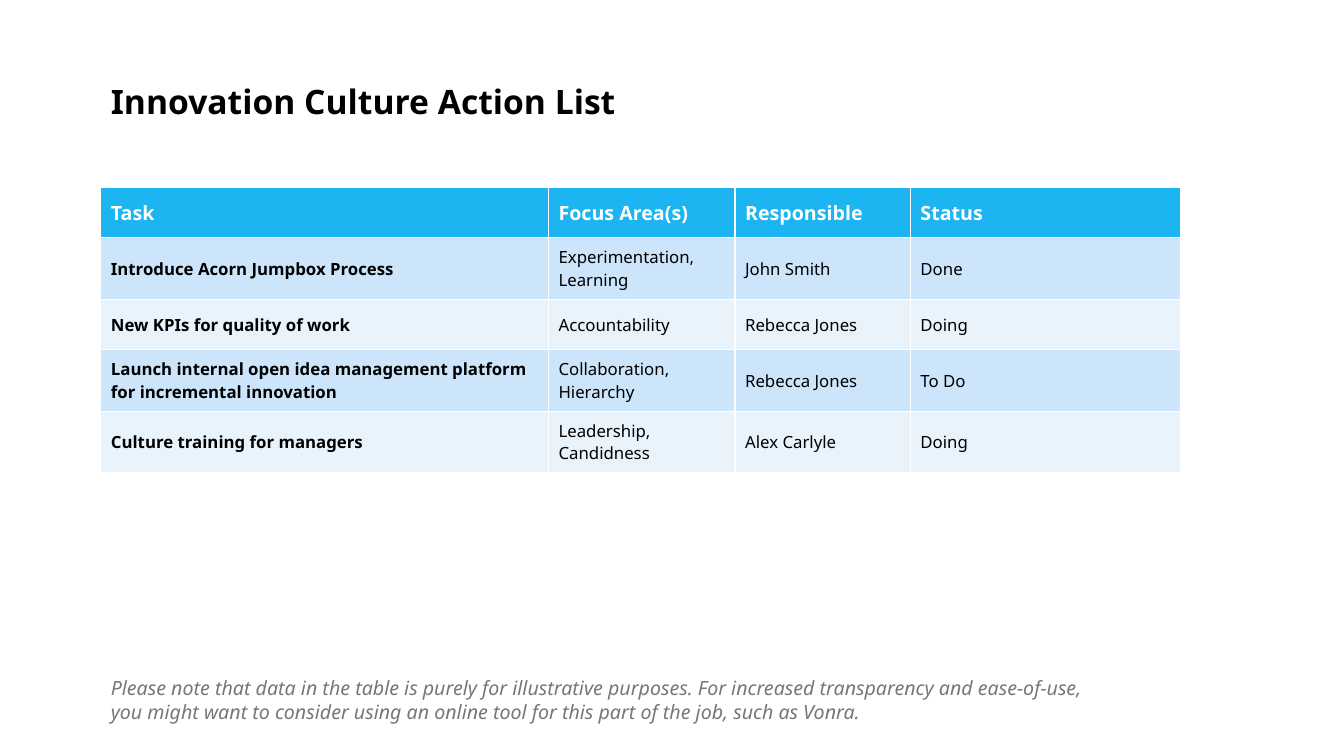
from pptx import Presentation
from pptx.dml.color import RGBColor
from pptx.enum.text import MSO_ANCHOR, MSO_AUTO_SIZE
from pptx.oxml import parse_xml
from pptx.oxml.ns import nsdecls
from pptx.util import Inches, Pt

MIDDLE = MSO_ANCHOR.MIDDLE
GROW = MSO_AUTO_SIZE.SHAPE_TO_FIT_TEXT
TITLE_ONLY = 5
COLORS = {
    "black": "000000",
    "white": "FFFFFF",
    "head": "1CB5F2",
    "odd": "CDE5FA",
    "even": "E8F3FC",
    "note": "777777",
}
COLS = [4.44, 1.85, 1.74, 2.68]
ROWS = [0.5, 0.61, 0.5, 0.61, 0.61]
TASKS = [
    ["Task", "Focus Area(s)", "Responsible", "Status"],
    ["Introduce Acorn Jumpbox Process", "Experimentation, Learning",
     "John Smith", "Done"],
    ["New KPIs for quality of work", "Accountability",
     "Rebecca Jones", "Doing"],
    ["Launch internal open idea management platform for incremental innovation",
     "Collaboration, Hierarchy", "Rebecca Jones", "To Do"],
    ["Culture training for managers", "Leadership, Candidness",
     "Alex Carlyle", "Doing"],
]
NOTE = (
    "Please note that data in the table is purely for illustrative purposes. "
    "For increased transparency and ease-of-use, you might want to consider "
    "using an online tool for this part of the job, such as Vonra."
)


def color(name):
    return RGBColor.from_string(COLORS[name])


def write(frame, text, ink, **style):
    frame.text = text
    font = frame.paragraphs[0].runs[0].font
    font.color.rgb = color(ink)
    for key, value in {"name": "Noto Sans", **style}.items():
        setattr(font, key, value)


def place(shape, *box):
    for key, value in zip(("left", "top", "width", "height"), box):
        setattr(shape, key, Inches(value))


def edge(cell):
    """Put a thin white line on all four sides of the cell."""
    props = cell._tc.get_or_add_tcPr()
    for index, side in enumerate(("lnL", "lnR", "lnT", "lnB")):
        props.insert(index, parse_xml(
            f'<a:{side} {nsdecls("a")} w="{Pt(1)}"><a:solidFill>'
            f'<a:srgbClr val="{COLORS["white"]}"/></a:solidFill></a:{side}>'))


def add_title(slide, text):
    title = slide.shapes.title
    place(title, 1, 0.84, 5.51, 0.37)
    frame = title.text_frame
    write(frame, text, "black", size=Pt(24), bold=True)
    frame.vertical_anchor = MIDDLE
    frame.paragraphs[0].line_spacing = 0.9
    frame.paragraphs[0].alignment = 1


def add_tasks(slide):
    table = slide.shapes.add_table(
        len(ROWS), len(COLS), Inches(1), Inches(1.86),
        Inches(sum(COLS)), Inches(sum(ROWS))).table
    for col, width in zip(table.columns, COLS):
        col.width = Inches(width)
    for r, (row, height) in enumerate(zip(table.rows, ROWS)):
        row.height = Inches(height)
        head = r == 0
        fill = "head" if head else "odd" if r % 2 else "even"
        for c, cell in enumerate(row.cells):
            write(cell.text_frame, TASKS[r][c], "white" if head else "black",
                  size=Pt(14 if head else 12), bold=head or c == 0)
            cell.vertical_anchor = MIDDLE
            cell.fill.solid()
            cell.fill.fore_color.rgb = color(fill)
            edge(cell)


def add_note(slide, text):
    box = slide.shapes.add_textbox(
        Inches(1), Inches(6.66), Inches(10.08), Inches(0.57))
    frame = box.text_frame
    frame.word_wrap = True
    frame.auto_size = GROW
    write(frame, text, "note", size=Pt(14), italic=True)


def main():
    deck = Presentation()
    deck.slide_width = Inches(13.33)
    deck.slide_height = Inches(7.5)
    slide = deck.slides.add_slide(deck.slide_layouts[TITLE_ONLY])
    add_title(slide, "Innovation Culture Action List")
    add_tasks(slide)
    add_note(slide, NOTE)
    deck.save("out.pptx")


if __name__ == "__main__":
    main()
